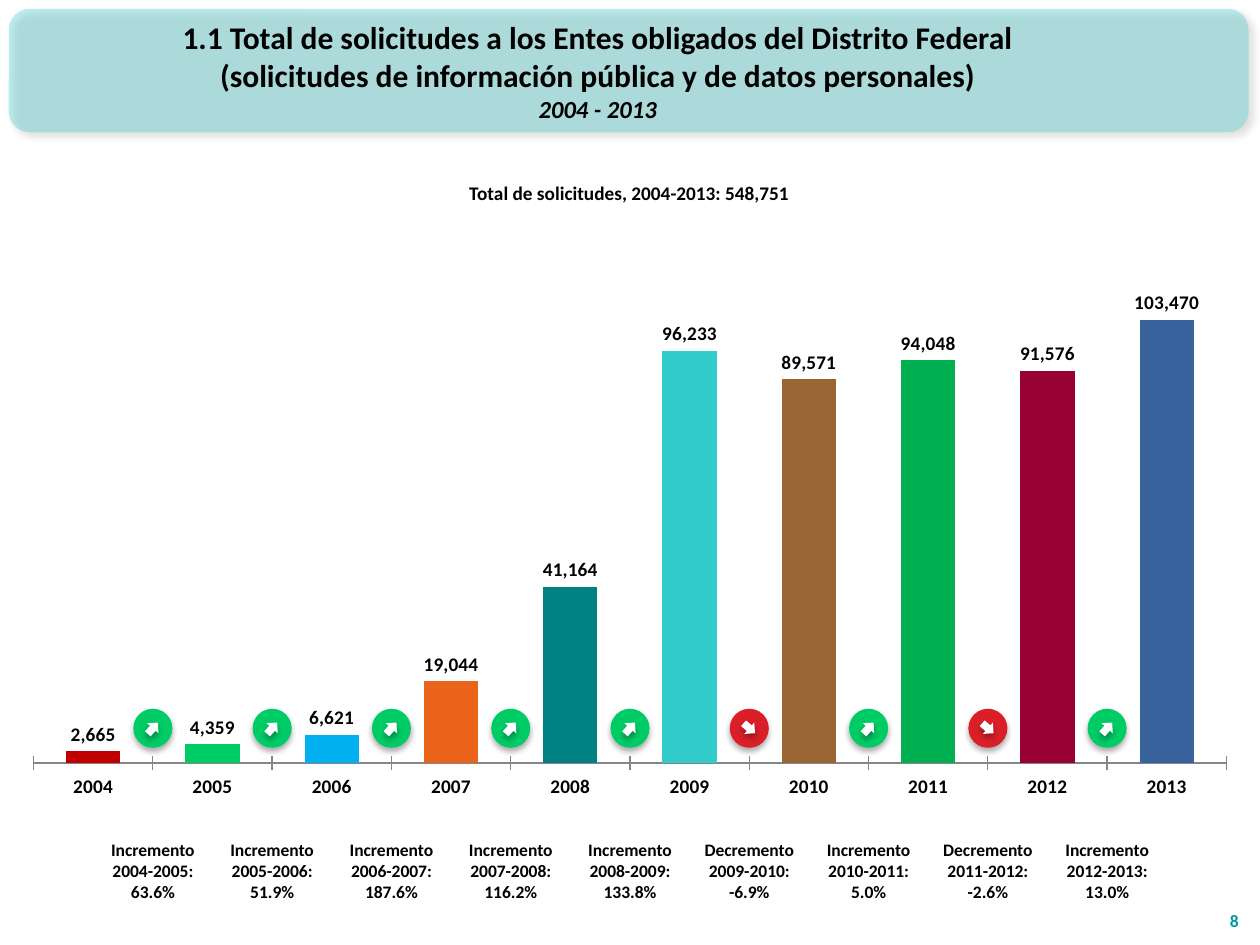
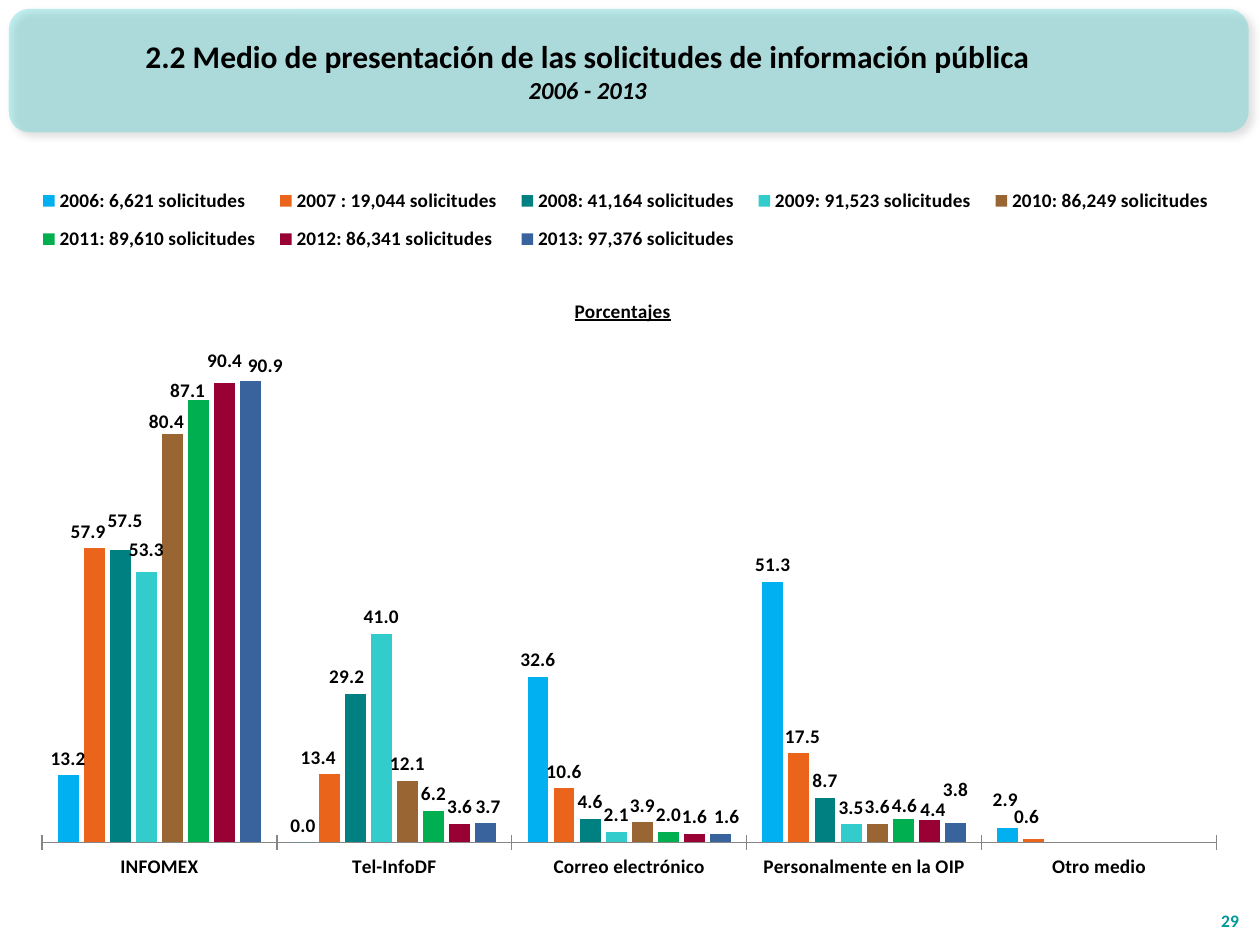
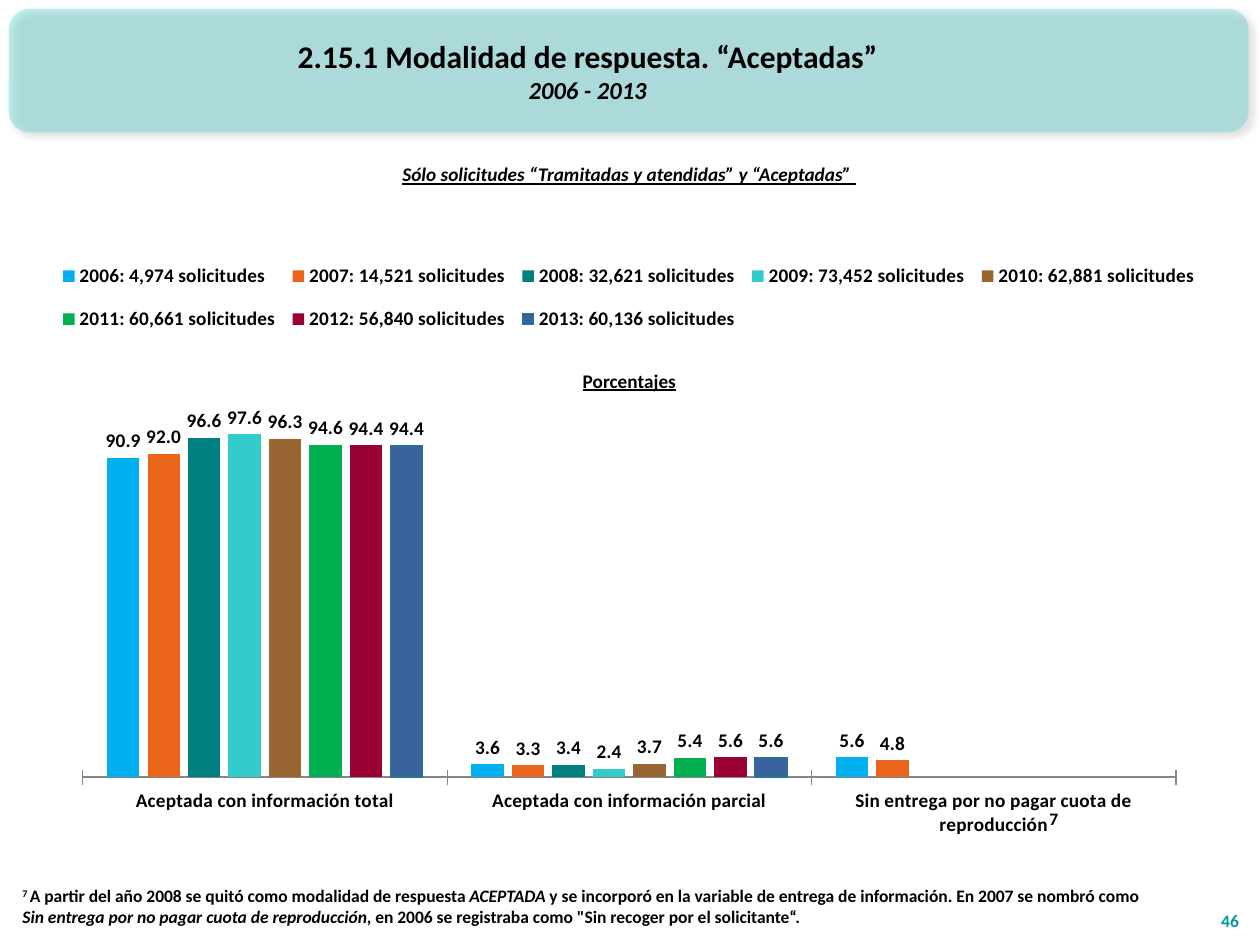
from lxml.etree import SubElement
from pptx import Presentation
from pptx.chart.data import CategoryChartData
from pptx.dml.color import RGBColor
from pptx.enum.chart import XL_CHART_TYPE, XL_LABEL_POSITION, XL_LEGEND_POSITION, XL_TICK_MARK
from pptx.enum.shapes import MSO_SHAPE
from pptx.enum.text import MSO_ANCHOR, PP_ALIGN
from pptx.oxml import parse_xml
from pptx.oxml.ns import nsdecls, qn
from pptx.util import Inches, Pt

# Shared style
FONT = "Calibri"
BLACK = RGBColor(0x00, 0x00, 0x00)
WHITE = RGBColor(0xFF, 0xFF, 0xFF)
GREY = RGBColor(0x86, 0x86, 0x86)
TEAL = RGBColor(0x00, 0x99, 0x99)
BAND = RGBColor(0x33, 0xCC, 0xCC)
UP = RGBColor(0x00, 0xCC, 0x66)
DOWN = RGBColor(0xDA, 0x1F, 0x28)
EDGE = RGBColor(0x21, 0x78, 0x8D)
YEAR_COLORS = [RGBColor.from_string(code) for code in (
    "C00000", "00CC66", "00B0F0", "EB641B", "008080",
    "33CCCC", "996633", "00B050", "990033", "39639D")]
BAND_SHADOW = dict(alpha=40, blur=4, distance=3, angle=45)
BADGE_SHADOW = dict(alpha=32, blur=3.5, distance=2.2, angle=90)

# Content: total requests by year
YEARS = list(range(2004, 2014))
REQUESTS = [2665, 4359, 6621, 19044, 41164, 96233, 89571, 94048, 91576, 103470]
TOTAL_BOX = (0.16, 2.02, 9.69, 4.51)
TOTAL_PLOT = (0.011, 0.066, 0.977, 0.829)

# Content: means of submission, one row per year
MEANS = ["INFOMEX", "Tel-InfoDF", "Correo electrónico", "Personalmente en la OIP", "Otro medio"]
MEANS_ROWS = [
    ("2006: 6,621 solicitudes", (13.2, 0, 32.6, 51.3, 2.9)),
    ("2007 : 19,044 solicitudes", (57.9, 13.4, 10.6, 17.5, 0.6)),
    ("2008: 41,164 solicitudes", (57.5, 29.2, 4.6, 8.7, None)),
    ("2009: 91,523 solicitudes", (53.3, 41, 2.1, 3.5, None)),
    ("2010: 86,249 solicitudes", (80.4, 12.1, 3.9, 3.6, None)),
    ("2011: 89,610 solicitudes", (87.1, 6.2, 2, 4.6, None)),
    ("2012: 86,341 solicitudes", (90.4, 3.6, 1.6, 4.4, None)),
    ("2013: 97,376 solicitudes", (90.9, 3.7, 1.6, 3.8, None)),
]
# Label shifts in percent of the chart: (row, category): (right, down)
MEANS_SHIFTS = {
    (0, 4): (-0.2, -1.5),
    (1, 0): (-0.5, 0), (1, 1): (-0.9, 0), (1, 3): (0.3, 0), (1, 4): (-0.6, -0.7),
    (2, 0): (0.4, -1.7), (2, 1): (-0.7, 0),
    (3, 0): (0, -0.7),
    (4, 0): (-0.5, 0.6),
    (5, 0): (-0.9, 1.1), (5, 3): (0.1, 0.5),
    (6, 0): (0, -0.7), (6, 3): (0.3, 1),
    (7, 0): (1.2, 0.3), (7, 1): (0.2, 0), (7, 2): (0.5, 0), (7, 3): (0, -2.3),
}

# Content: kinds of accepted answer, one row per year
ANSWERS = ["Aceptada con información total", "Aceptada con información parcial",
           "Sin entrega por no pagar cuota de reproducción"]
ANSWER_ROWS = [
    ("2006: 4,974 solicitudes", (90.9, 3.6, 5.6)),
    ("2007: 14,521 solicitudes", (92, 3.3, 4.8)),
    ("2008: 32,621 solicitudes", (96.6, 3.4, None)),
    ("2009: 73,452 solicitudes", (97.6, 2.4, None)),
    ("2010: 62,881 solicitudes", (96.3, 3.7, None)),
    ("2011: 60,661 solicitudes", (94.6, 5.4, None)),
    ("2012: 56,840 solicitudes", (94.4, 5.6, None)),
    ("2013: 60,136 solicitudes", (94.4, 5.6, None)),
]
NOTE = [
    ("7 ", dict(raised=True)),
    ("A partir del año 2008 se quitó como modalidad de respuesta ", {}),
    ("ACEPTADA", dict(italic=True)),
    (" y se incorporó en la variable de entrega de información. En 2007 se nombró como ", {}),
    ("Sin entrega por no pagar cuota de reproducción", dict(italic=True)),
    (', en 2006 se registraba como "Sin recoger por el solicitante“.', {}),
]


# Text
def set_font(font, size=11, color=BLACK, bold=True, italic=None, underline=None):
    font.name, font.size, font.bold = FONT, Pt(size), bold
    font.italic, font.underline = italic, underline
    font.color.rgb = color


def write(frame, paragraphs, align=PP_ALIGN.CENTER, anchor=MSO_ANCHOR.TOP, **style):
    """Each paragraph is a string or a list of (text, format) spans."""
    frame.word_wrap = True
    frame.vertical_anchor = anchor
    for index, spans in enumerate(paragraphs):
        para = frame.add_paragraph() if index else frame.paragraphs[0]
        para.alignment = align
        for text, changes in [(spans, {})] if isinstance(spans, str) else spans:
            look = {**style, **changes}
            raised = look.pop("raised", False)
            span = para.add_run()
            span.text = text
            set_font(span.font, **look)
            if raised:
                span.font._element.set("baseline", "30000")


def add_text(page, box, paragraphs, **style):
    area = page.shapes.add_textbox(*map(Inches, box))
    write(area.text_frame, paragraphs, **style)


# Shapes
def add_plain_shape(page, kind, box, color, shadow, opacity=100, rotation=0):
    shape = page.shapes.add_shape(kind, *map(Inches, box))
    shape.rotation = rotation
    shape.fill.solid()
    shape.fill.fore_color.rgb = color
    shape.line.fill.background()
    shape.shadow.inherit = False
    if opacity < 100:
        tone = shape.element.spPr.find(qn("a:solidFill")).find(qn("a:srgbClr"))
        SubElement(tone, qn("a:alpha"), val=str(opacity * 1000))
    effects = shape.element.spPr.find(qn("a:effectLst"))
    cast = SubElement(effects, qn("a:outerShdw"), blurRad=str(Pt(shadow["blur"])),
                      dist=str(Pt(shadow["distance"])), dir=str(shadow["angle"] * 60000),
                      algn="ctr", rotWithShape="0")
    tone = SubElement(cast, qn("a:srgbClr"), val="000000")
    SubElement(tone, qn("a:alpha"), val=str(shadow["alpha"] * 1000))
    return shape


def add_page(deck, title, period, number, title_width=9.17):
    page = deck.slides.add_slide(deck.slide_layouts[5])
    box = page.shapes.title
    box.left, box.top, box.width, box.height = map(Inches, (0.08, 0.09, title_width, 0.94))
    write(box.text_frame, [*title, [(period, dict(size=14, italic=True))]],
          anchor=MSO_ANCHOR.MIDDLE, size=18)
    add_text(page, (9.45, 7.04, 0.48, 0.4), [str(number)], align=PP_ALIGN.RIGHT,
             anchor=MSO_ANCHOR.BOTTOM, size=10, color=TEAL)
    return page


# Charts
def place(parent, position, x, y, width=None, height=None, target=None, modes=True):
    """Give a chart part a manual layout, in shares of the chart."""
    for old in parent.findall(qn("c:layout")):
        parent.remove(old)
    rules = [("layoutTarget", target)] if target else []
    if modes:
        rules += [("xMode", "edge"), ("yMode", "edge")]
    rules += [("x", x), ("y", y), ("w", width), ("h", height)]
    inner = "".join(f'<c:{name} val="{value}"/>' for name, value in rules if value is not None)
    parent.insert(position, parse_xml(
        f'<c:layout {nsdecls("c")}><c:manualLayout>{inner}</c:manualLayout></c:layout>'))


def add_columns(page, box, categories, rows, plot_area, top, gap, overlap=0,
                number_format="0.0", legend=None):
    data = CategoryChartData(number_format=number_format)
    data.categories = categories
    for name, values in rows:
        data.add_series(name, values)
    chart = page.shapes.add_chart(
        XL_CHART_TYPE.COLUMN_CLUSTERED, *map(Inches, box), data).chart
    set_font(chart.font)
    chart.has_title = False
    place(chart.element.find(".//" + qn("c:plotArea")), 0, *plot_area, target="inner")

    plot = chart.plots[0]
    plot.gap_width, plot.overlap, plot.vary_by_categories = gap, overlap, False
    for series, color in zip(plot.series, YEAR_COLORS[2:]):
        series.format.fill.solid()
        series.format.fill.fore_color.rgb = color
        labels = series.data_labels
        labels.show_value = True
        labels.position = XL_LABEL_POSITION.OUTSIDE_END
        labels.number_format, labels.number_format_is_linked = number_format, False
        set_font(labels.font)
    for leader in chart.element.findall(".//" + qn("c:showLeaderLines")):
        leader.set("val", "0")

    chart.value_axis.minimum_scale, chart.value_axis.maximum_scale = 0, top
    chart.value_axis.has_major_gridlines = False
    chart.value_axis.visible = False
    axis = chart.category_axis
    axis.major_tick_mark = XL_TICK_MARK.CROSS
    axis.format.line.color.rgb = GREY
    set_font(axis.tick_labels.font)

    chart.has_legend = legend is not None
    if legend:
        chart.legend.position = XL_LEGEND_POSITION.TOP
        chart.legend.include_in_layout = False
        set_font(chart.legend.font)
        place(chart.element.find(".//" + qn("c:legend")), 1, *legend)
    return chart


def shift_labels(chart, shifts):
    for (row, category), (right, down) in shifts.items():
        label = chart.plots[0].series[row].points[category].data_label
        set_font(label.font)
        label.position = XL_LABEL_POSITION.OUTSIDE_END
        mark = chart.element.xpath(f".//c:ser[{row + 1}]//c:dLbl[c:idx/@val={category}]")[0]
        place(mark, 1, right / 100, down / 100, modes=False)


# Pages
def add_total_page(deck):
    page = add_page(deck, ["1.1 Total de solicitudes a los Entes obligados del Distrito Federal",
                           "(solicitudes de información pública y de datos personales)"],
                    "2004 - 2013", 8, title_width=9.33)
    add_text(page, (1.86, 1.39, 6.27, 0.29),
             [f"Total de solicitudes, 2004-2013: {sum(REQUESTS):,}"])
    chart = add_columns(page, TOTAL_BOX, [str(year) for year in YEARS],
                        [("Solicitudes", REQUESTS)], TOTAL_PLOT, 110000, 120,
                        number_format="#,##0")
    for index, color in enumerate(YEAR_COLORS):
        fill = chart.plots[0].series[0].points[index].format.fill
        fill.solid()
        fill.fore_color.rgb = color

    # One badge and one caption on each boundary between years
    start = TOTAL_BOX[0] + TOTAL_PLOT[0] * TOTAL_BOX[2]
    step = TOTAL_PLOT[2] * TOTAL_BOX[2] / len(YEARS)
    badge, arrow, caption, middle = 0.31, 0.12, 1.0, 5.78
    for index in range(1, len(YEARS)):
        center = start + index * step
        change = REQUESTS[index] / REQUESTS[index - 1] - 1
        word, color, angle = (("Incremento", UP, 312) if change > 0
                              else ("Decremento", DOWN, 41))
        for kind, size, tint, turn in ((MSO_SHAPE.OVAL, badge, color, 0),
                                       (MSO_SHAPE.RIGHT_ARROW, arrow, WHITE, angle)):
            add_plain_shape(page, kind, (center - size / 2, middle - size / 2, size, size),
                            tint, BADGE_SHADOW, rotation=turn)
        add_text(page, (center - caption / 2, 6.61, caption, 0.61),
                 [word, f"{YEARS[index - 1]}-{YEARS[index]}:", f"{change:.1%}"], size=10)
    return page


def add_means_page(deck):
    page = add_page(deck, ["2.2 Medio de presentación de las solicitudes de información pública"],
                    "2006 - 2013", 29)
    chart = add_columns(page, (0.18, 1.31, 9.63, 5.75), MEANS, MEANS_ROWS,
                        (0.016, 0.234, 0.968, 0.701), 100, 150, -25,
                        legend=(0.002, 0.013, 0.99, 0.126))
    shift_labels(chart, MEANS_SHIFTS)
    write(chart.chart_title.text_frame, ["Porcentajes"], underline=True)
    place(chart.element.find(".//" + qn("c:title")), 1, 0.452, 0.178)


def add_answers_page(deck):
    page = add_page(deck, ["2.15.1 Modalidad de respuesta. “Aceptadas”"], "2006 - 2013", 46)
    # The plot leaves room below its axis for a category label of two lines
    chart = add_columns(page, (0.35, 1.86, 9.29, 4.88), ANSWERS, ANSWER_ROWS,
                        (0.033, 0.283, 0.934, 0.6), 105, 150, -25,
                        legend=(0.007, 0.017, 0.985, 0.172))
    outline = chart.plots[0].series[-1].format.line
    outline.color.rgb, outline.width = EDGE, Pt(0.75)
    add_text(page, (4.32, 2.88, 1.35, 0.29), ["Porcentajes"], underline=True)
    add_text(page, (2.65, 1.24, 4.69, 0.29),
             ["Sólo solicitudes “Tramitadas y atendidas” y “Aceptadas” "],
             italic=True, underline=True)
    add_text(page, (0.08, 6.97, 9.17, 0.44), [NOTE], size=10,
             align=PP_ALIGN.LEFT, anchor=MSO_ANCHOR.MIDDLE)
    add_text(page, (8.23, 6.36, 0.32, 0.27), ["7"], size=10,
             align=PP_ALIGN.LEFT, anchor=MSO_ANCHOR.MIDDLE)


def main():
    deck = Presentation()
    deck.slide_width, deck.slide_height = Inches(10), Inches(7.5)
    first = add_total_page(deck)
    # The band moves to the layout, so that every page shows it
    band = add_plain_shape(first, MSO_SHAPE.ROUNDED_RECTANGLE, (0.07, 0.07, 9.84, 0.98),
                           BAND, BAND_SHADOW, opacity=30)
    first.slide_layout.placeholders[0].element.addprevious(band.element)
    add_means_page(deck)
    add_answers_page(deck)
    deck.save("out.pptx")


if __name__ == "__main__":
    main()
